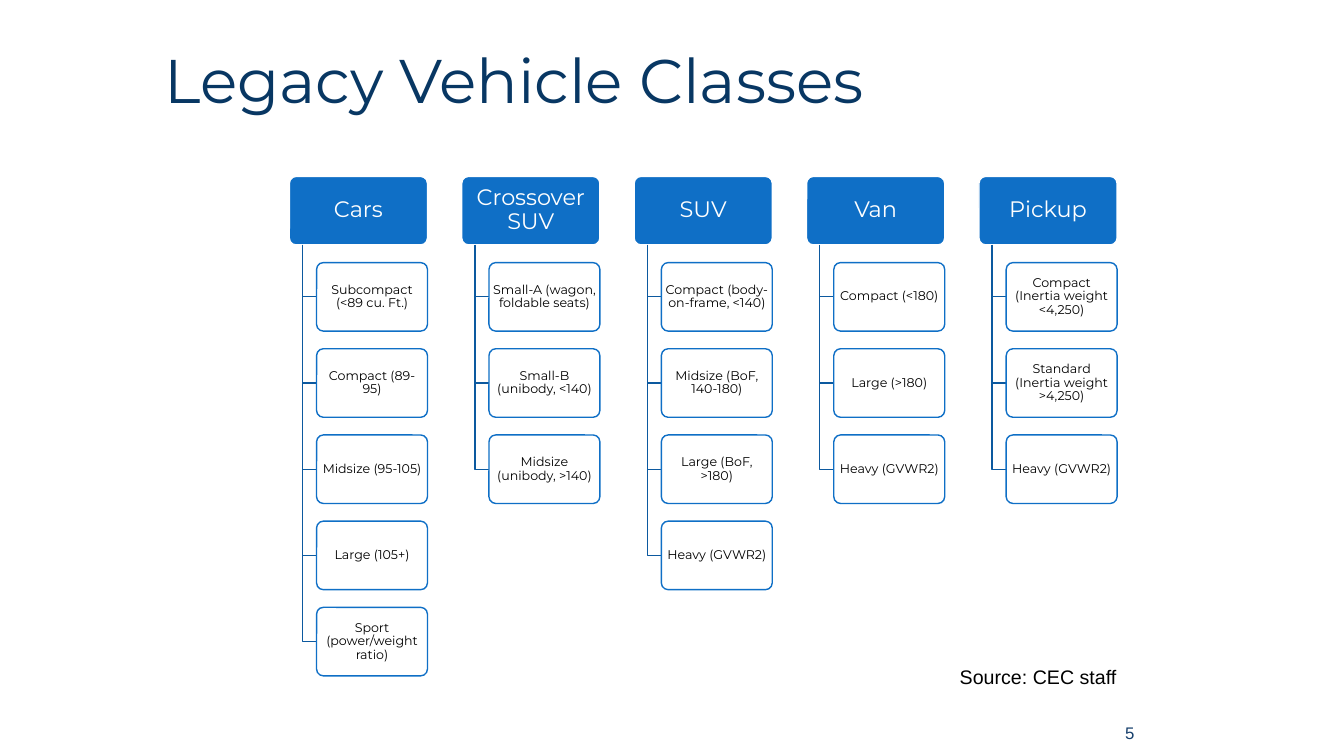
import dataclasses

import lxml.etree
import pptx
import pptx.dml.color
import pptx.enum.shapes
import pptx.enum.text
import pptx.oxml.ns
import pptx.util

Inches = pptx.util.Inches
ALIGN = pptx.enum.text.PP_ALIGN
MIDDLE = pptx.enum.text.MSO_ANCHOR.MIDDLE
qn = pptx.oxml.ns.qn


@dataclasses.dataclass(frozen=True)
class Theme:
    head: str = "Montserrat"
    plain: str = "Arial"
    navy: str = "083763"
    blue: str = "0F6FC6"
    deep: str = "0C599F"
    slate: str = "17406D"
    white: str = "FFFFFF"
    black: str = "000000"
    title: int = 44
    group: int = 16
    source: int = 14
    number: int = 12
    card: int = 9


theme = Theme()
rgb = pptx.dml.color.RGBColor.from_string


def write(shape, text, face, size, color, align=ALIGN.LEFT, gap=1.0, **frame):
    """Fill a shape with one run of text; frame holds text frame settings."""
    for key, value in {"word_wrap": True, **frame}.items():
        setattr(shape.text_frame, key, value)
    para = shape.text_frame.paragraphs[0]
    para.alignment, para.line_spacing = align, gap
    run = para.add_run()
    run.text = text
    for key, value in {"name": face, "size": pptx.util.Pt(size)}.items():
        setattr(run.font, key, value)
    run.font.color.rgb = rgb(color)


def box(left, top, width, text, fill, line, size, color, side, edge):
    """Draw a rounded box with centred text."""
    shape = slide.shapes.add_shape(
        pptx.enum.shapes.MSO_SHAPE.ROUNDED_RECTANGLE,
        Inches(left), Inches(top), Inches(width), Inches(HIGH))
    shape.adjustments[0] = 0.1
    shape.shadow.inherit = False
    shape.fill.solid()
    shape.fill.fore_color.rgb = rgb(fill)
    shape.line.color.rgb = rgb(line)
    shape.line.width = pptx.util.Pt(1)
    write(shape, text, theme.head, size, color, ALIGN.CENTER, 0.9,
          vertical_anchor=MIDDLE,
          margin_left=Inches(side), margin_right=Inches(side),
          margin_top=Inches(edge), margin_bottom=Inches(edge))
    return shape


groups = {
    "Cars": ["Subcompact (<89 cu. Ft.)", "Compact (89-95)", "Midsize (95-105)",
             "Large (105+)", "Sport (power/weight ratio)"],
    "Crossover SUV": ["Small-A (wagon, foldable seats)",
                      "Small-B (unibody, <140)", "Midsize (unibody, >140)"],
    "SUV": ["Compact (body-on-frame, <140)", "Midsize (BoF, 140-180)",
            "Large (BoF, >180)", "Heavy (GVWR2)"],
    "Van": ["Compact (<180)", "Large (>180)", "Heavy (GVWR2)"],
    "Pickup": ["Compact (Inertia weight <4,250)",
               "Standard (Inertia weight >4,250)", "Heavy (GVWR2)"],
}

deck = pptx.Presentation()
deck.slide_width, deck.slide_height = Inches(13.33), Inches(7.5)
slide = deck.slides.add_slide(deck.slide_layouts[5])

title = slide.shapes.title
title.left, title.top = Inches(1.53), Inches(0.26)
title.width, title.height = Inches(10.89), Inches(1.14)
write(title, "Legacy Vehicle Classes", theme.head, theme.title, theme.navy,
      gap=0.9, vertical_anchor=MIDDLE)

# Columns of classes: each row step is half a column step
LEFT, TOP, HIGH = 2.87, 1.75, 0.68
WIDE, CARD = 1.37, 1.10
STEP = 1.71
for col, (name, classes) in enumerate(groups.items()):
    left = LEFT + col * STEP
    box(left, TOP, WIDE, name, theme.blue, theme.white,
        theme.group, theme.white, 0.03, 0.02)
    trunk, inner = left + 0.13, left + 0.27
    for row, label in enumerate(classes):
        top = TOP + (row + 1) * STEP / 2
        mid = top + HIGH / 2
        outline = slide.shapes.build_freeform(
            Inches(trunk), Inches(TOP + HIGH))
        outline.add_line_segments([(Inches(trunk), Inches(mid)),
                                   (Inches(inner), Inches(mid))], close=False)
        branch = outline.convert_to_shape()
        branch.shadow.inherit = False
        branch.fill.background()
        branch.line.color.rgb = rgb(theme.deep)
        branch.line.width = pptx.util.Pt(1)

        card = box(inner, top, CARD, label, theme.white, theme.blue,
                   theme.card, theme.black, 0.02, 0.01)
        tint = card.element.spPr.find(qn("a:solidFill"))[0]
        lxml.etree.SubElement(tint, qn("a:alpha"), val="90000")

source = slide.shapes.add_textbox(
    Inches(9.42), Inches(6.55), Inches(3), Inches(0.34))
write(source, "Source: CEC staff", theme.plain, theme.source, theme.black)

number = slide.shapes.add_textbox(
    Inches(9.42), Inches(7.07), Inches(1.93), Inches(0.4))
write(number, "5", theme.plain, theme.number, theme.slate,
      ALIGN.RIGHT, vertical_anchor=MIDDLE)

deck.save("out.pptx")
